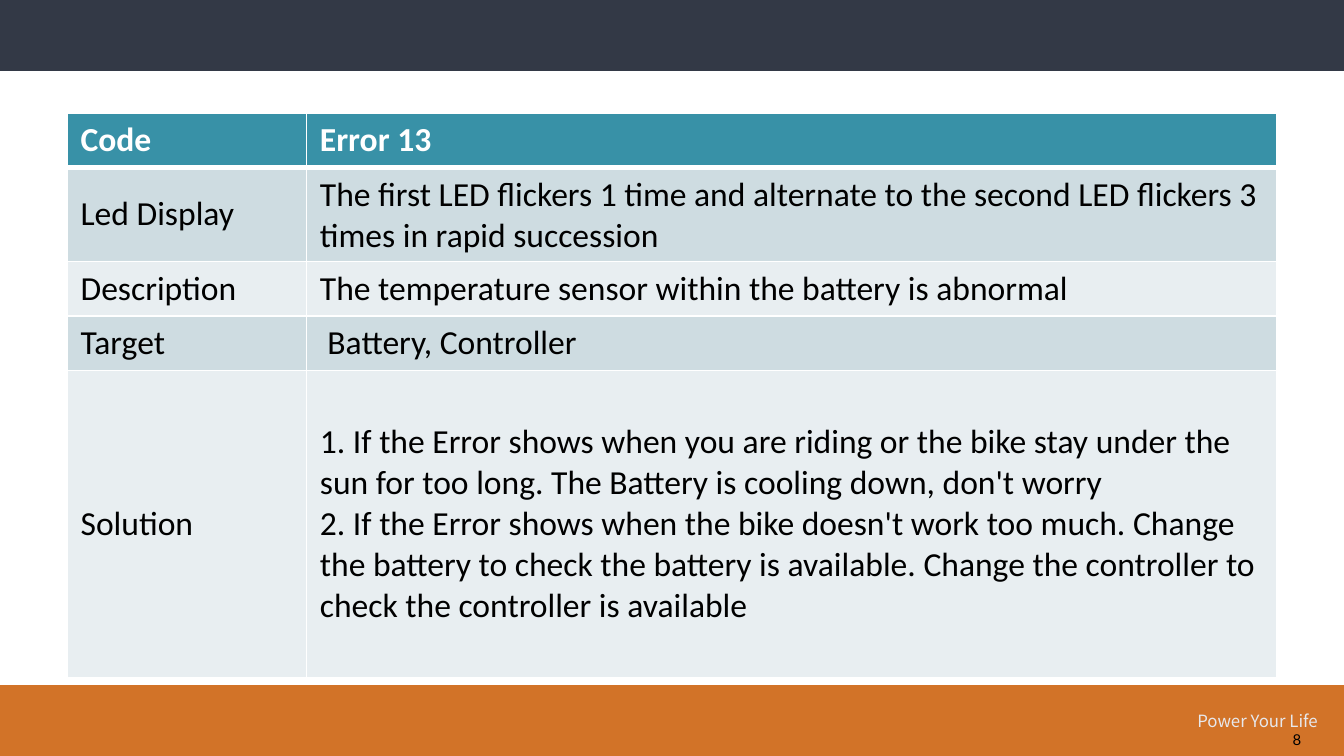
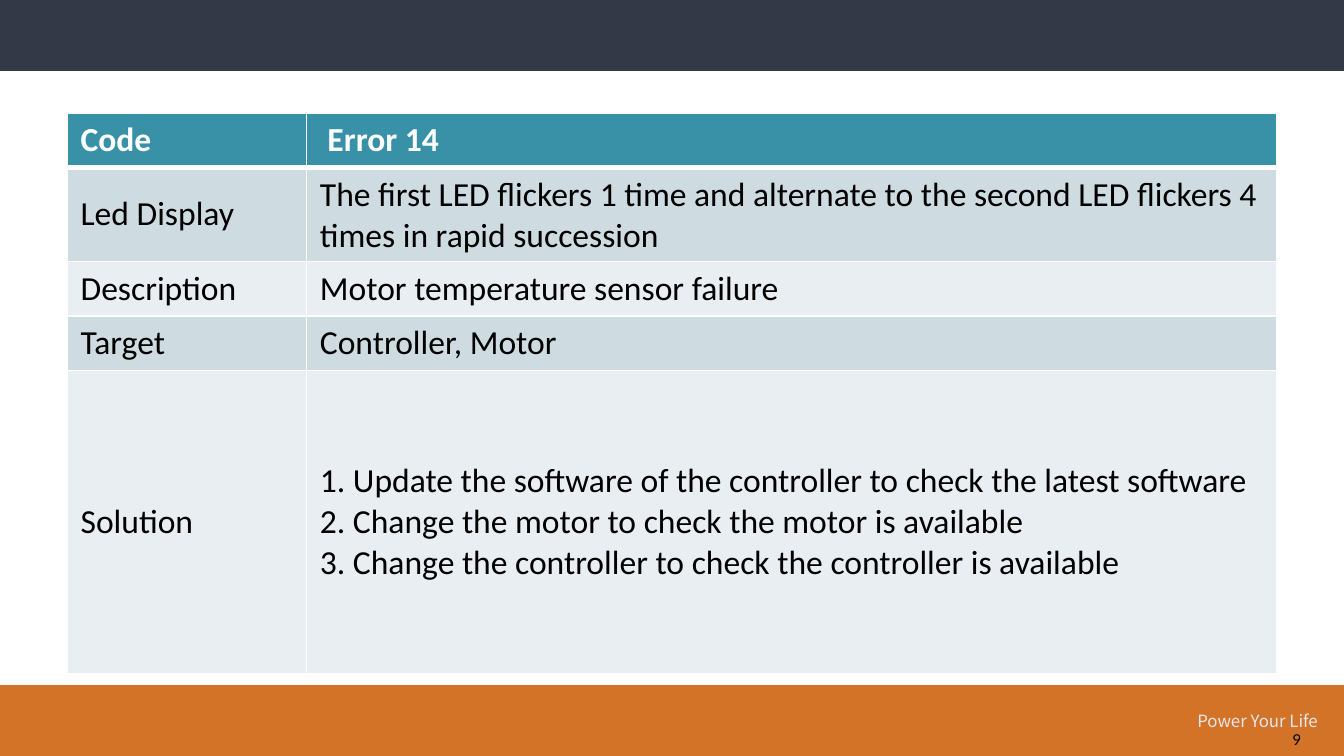
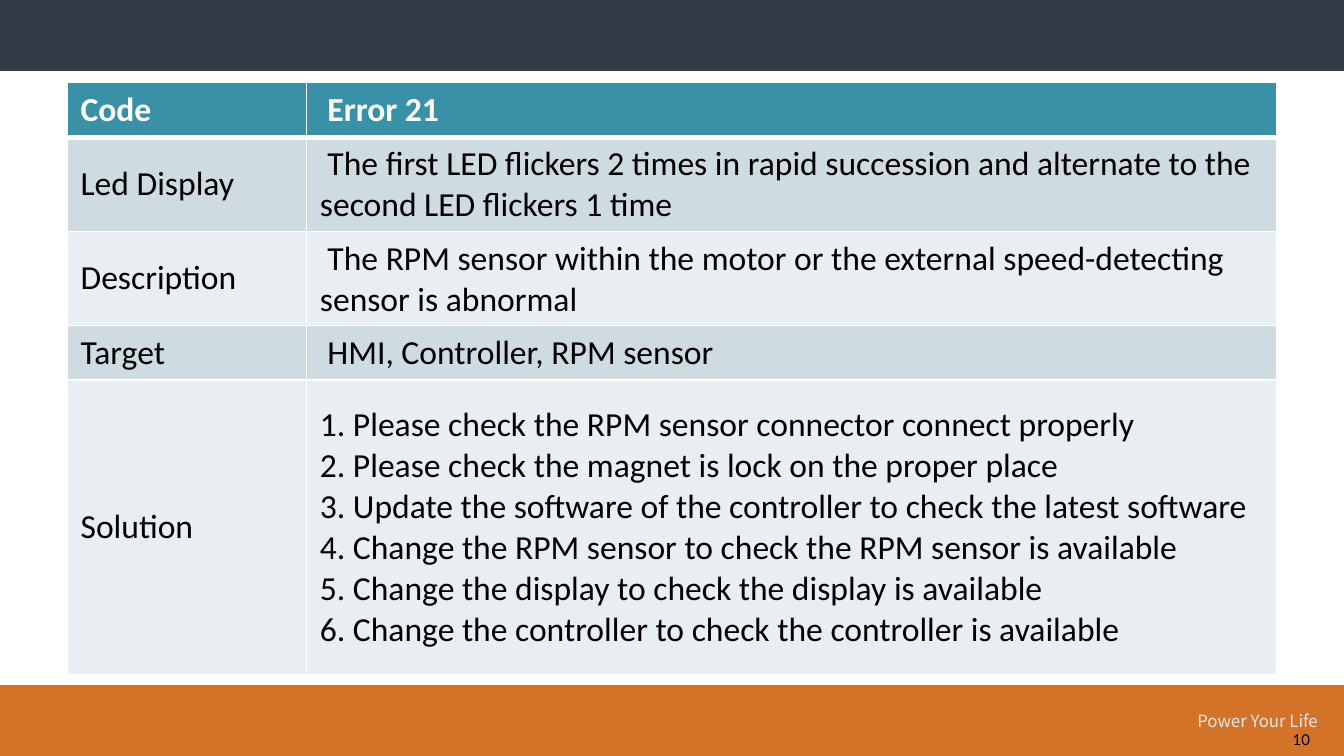
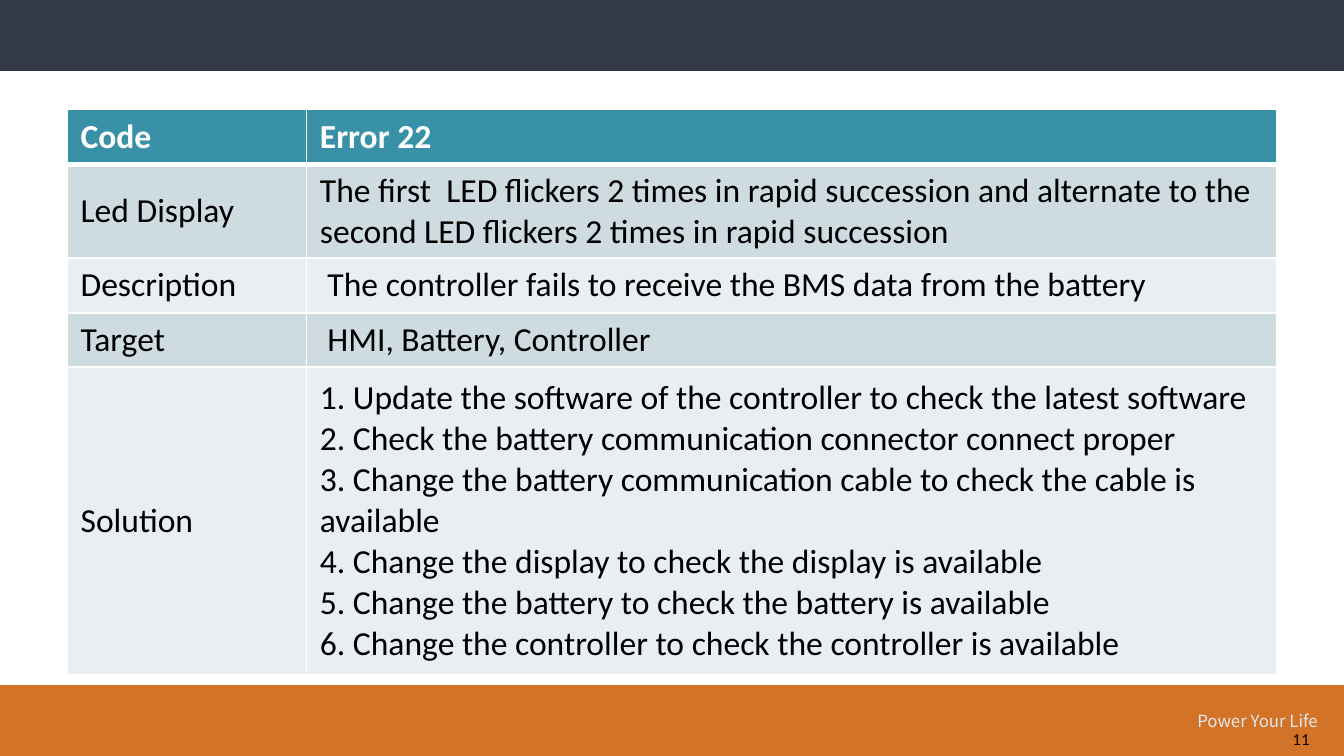
from lxml.etree import SubElement as Sub
from pptx import Presentation as Deck
from pptx.dml.color import RGBColor as Color
from pptx.enum.shapes import MSO_SHAPE as Shape
from pptx.enum.text import MSO_ANCHOR as Anchor
from pptx.oxml.ns import qn
from pptx.util import Pt

NAVY = Color(0x33, 0x39, 0x46)
ORANGE = Color(0xD2, 0x73, 0x28)
TEAL = Color(0x38, 0x91, 0xA7)
MIST = Color(0xCE, 0xDC, 0xE1)
PALE = Color(0xE8, 0xEE, 0xF1)
SILVER = Color(0xE7, 0xE8, 0xEC)
WHITE = Color(0xFF, 0xFF, 0xFF)
BLACK = Color(0, 0, 0)

WIDE, HIGH = 720, 405
BAND = 38
LEFT = 36
COLS = (128.2, 519.8)
LINE, PAIR = 29.2, 50.4  # rows of one and of two text lines
LABELS = ("Code", "Led Display", "Description", "Target", "Solution")
FIRST = 8  # number on the first page

LATEST = "Update the software of the controller to check the latest software"


def change(part):
    return f"Change the {part} to check the {part} is available"


# Table top, row heights, then the answers to LABELS
ERRORS = [
    (60.5, (LINE, PAIR, LINE, LINE, 164.5), (
        "Error 13",
        "The first LED flickers 1 time and alternate to the second LED "
        "flickers 3 times in rapid succession",
        "The temperature sensor within the battery is abnormal",
        " Battery, Controller",
        ["If the Error shows when you are riding or the bike stay under the "
         "sun for too long. The Battery is cooling down, don't worry",
         "If the Error shows when the bike doesn't work too much. "
         f"{change('battery')}. {change('controller')}"])),
    (60.5, (LINE, PAIR, LINE, LINE, 162.5), (
        " Error 14",
        "The first LED flickers 1 time and alternate to the second LED "
        "flickers 4 times in rapid succession",
        "Motor temperature sensor failure",
        "Controller, Motor",
        [LATEST, change("motor"), change("controller")])),
    (44.3, (LINE, PAIR, PAIR, LINE, 158), (
        " Error 21",
        " The first LED flickers 2 times in rapid succession and alternate "
        "to the second LED flickers 1 time",
        " The RPM sensor within the motor or the external speed-detecting "
        "sensor is abnormal",
        " HMI, Controller, RPM sensor",
        ["Please check the RPM sensor connector connect properly",
         "Please check the magnet is lock on the proper place",
         LATEST, change("RPM sensor"), change("display"),
         change("controller")])),
    (58.7, (LINE, PAIR, LINE, LINE, 165), (
        "Error 22",
        "The first  LED flickers 2 times in rapid succession and alternate "
        "to the second LED flickers 2 times in rapid succession",
        " The controller fails to receive the BMS data from the battery",
        " HMI, Battery, Controller",
        [LATEST,
         "Check the battery communication connector connect proper",
         "Change the battery communication cable to check the cable is "
         "available",
         change("display"), change("battery"), change("controller")])),
]


def write(frame, text, size=18, font="Calibri", color=BLACK, bold=False):
    """Fill a text frame; a list of texts becomes numbered paragraphs."""
    if isinstance(text, list):
        text = "\n".join(f"{n}. {step}" for n, step in enumerate(text, 1))
    frame.text = text
    for para in frame.paragraphs:
        face = para.runs[0].font
        face.size, face.name, face.bold = Pt(size), font, bold
        face.color.rgb = color


def edge(cell, **widths):
    """Draw white cell borders; the sides come in the order L, R, T, B."""
    props = cell._tc.get_or_add_tcPr()
    for spot, (side, width) in enumerate(widths.items()):
        line = Sub(props, qn(f"a:ln{side}"), w=str(Pt(width)))
        fill = Sub(line, qn("a:solidFill"))
        Sub(fill, qn("a:srgbClr"), val=str(WHITE))
        props.insert(spot, line)


class Guide:
    def __init__(self):
        self.deck = Deck()
        self.deck.slide_width, self.deck.slide_height = Pt(WIDE), Pt(HIGH)
        self.slide = None

    def page(self, number):
        self.slide = self.deck.slides.add_slide(self.deck.slide_layouts[6])
        self.band(0, NAVY)
        self.band(HIGH - BAND, ORANGE)
        self.label("Power Your Life", 634.3, 377.3, 18, size=9,
                   font="Noto Sans CJK SC", color=SILVER)
        self.label(str(number), 685.4, 388, 14.4, size=8, font="Lato")

    def band(self, top, color):
        bar = self.slide.shapes.add_shape(
            Shape.RECTANGLE, Pt(0), Pt(top), Pt(WIDE), Pt(BAND))
        bar.shadow.inherit = False
        bar.fill.solid()
        bar.fill.fore_color.rgb = color
        bar.line.fill.background()

    def label(self, text, left, top, height, **style):
        """Add a text box that runs to the right edge of the slide."""
        box = self.slide.shapes.add_textbox(
            Pt(left), Pt(top), Pt(WIDE - left), Pt(height))
        box.text_frame.word_wrap = True
        write(box.text_frame, text, **style)

    def table(self, top, heights, answers):
        grid = self.slide.shapes.add_table(
            len(LABELS), len(COLS), Pt(LEFT), Pt(top),
            Pt(sum(COLS)), Pt(sum(heights))).table
        for col, width in zip(grid.columns, COLS):
            col.width = Pt(width)
        for row, height in zip(grid.rows, heights):
            row.height = Pt(height)
        for r, pair in enumerate(zip(LABELS, answers)):
            head = r == 0
            fill = TEAL if head else (PALE, MIST)[r % 2]
            for c, text in enumerate(pair):
                cell = grid.cell(r, c)
                cell.vertical_anchor = Anchor.MIDDLE
                cell.fill.solid()
                cell.fill.fore_color.rgb = fill
                edge(cell, L=1, R=1, T=3 if r == 1 else 1, B=3 if head else 1)
                write(cell.text_frame, text, bold=head,
                      color=WHITE if head else BLACK)


def main():
    guide = Guide()
    for number, error in enumerate(ERRORS, FIRST):
        guide.page(number)
        guide.table(*error)
    guide.deck.save("out.pptx")


if __name__ == "__main__":
    main()
